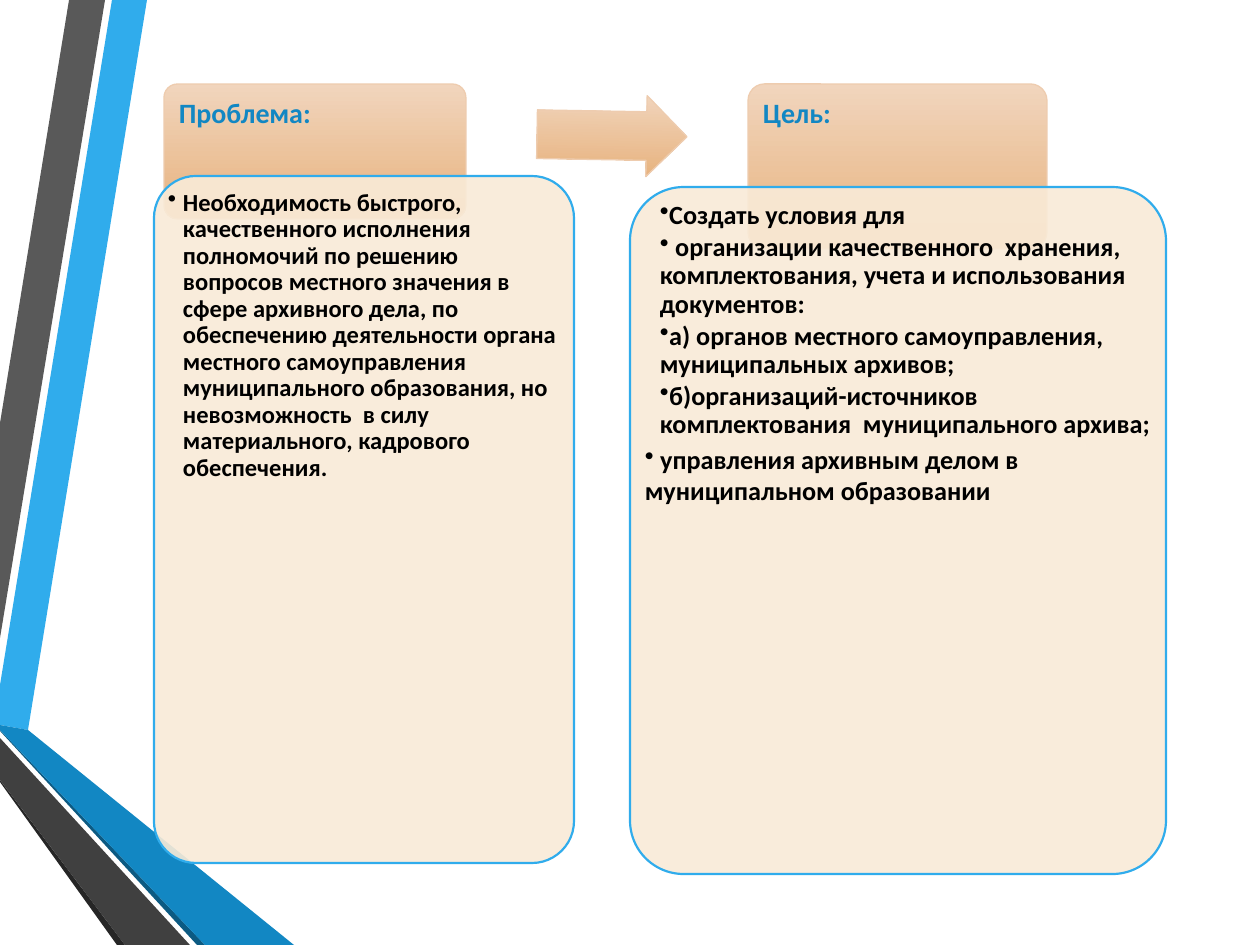
from lxml.etree import SubElement
from pptx import Presentation
from pptx.dml.color import RGBColor
from pptx.enum.shapes import MSO_SHAPE as Shape
from pptx.oxml.ns import qn
from pptx.util import Emu, Pt

PX = 914400 / 126
SLIDE_W, SLIDE_H = 1260, 945

SKY = RGBColor(0x30, 0xAC, 0xEC)
BLUE = RGBColor(0x12, 0x87, 0xC3)
DEEP_BLUE = RGBColor(0x0C, 0x5A, 0x82)
GREY = RGBColor(0x59, 0x59, 0x59)
DARK_GREY = RGBColor(0x40, 0x40, 0x40)
CHARCOAL = RGBColor(0x26, 0x26, 0x26)
PEACH = RGBColor(0xF1, 0xD5, 0xBD)
ORANGE = RGBColor(0xE7, 0xB2, 0x7D)
PEACH_EDGE = RGBColor(0xEE, 0xCC, 0xAF)
CREAM = RGBColor(0xF9, 0xEB, 0xD8)
BLACK = RGBColor(0, 0, 0)

# Ribbons at the left edge, from back to front
RIBBONS = [
    (SKY, [(0, 685), (0, 725), (28, 730), (147, 0), (112, 0)]),
    (GREY, [(105, 0), (69, 0), (0, 423), (0, 638)]),
    (CHARCOAL, [(0, 780), (0, 782), (117, 945), (125, 945)]),
    (DEEP_BLUE, [(0, 730), (0, 731), (197, 945), (205, 945)]),
    (BLUE, [(0, 730), (205, 945), (294, 945), (28, 730), (0, 725)]),
    (DARK_GREY, [(0, 780), (125, 945), (190, 945), (0, 738)]),
]

PROBLEM = [
    "Необходимость быстрого, качественного исполнения полномочий по решению "
    "вопросов местного значения в сфере архивного дела, по обеспечению "
    "деятельности органа местного самоуправления муниципального образования, "
    "но невозможность  в силу материального, кадрового обеспечения.",
]
GOALS = [
    "Создать условия для",
    " организации качественного  хранения, комплектования, учета и "
    "использования документов:",
    "а) органов местного самоуправления, муниципальных архивов;",
    "б)организаций-источников комплектования  муниципального архива;",
]
LAST_GOAL = " управления архивным делом в муниципальном образовании"


def px(length):
    return Emu(round(length * PX))


def add_ribbon(slide, color, points):
    builder = slide.shapes.build_freeform(*points[0], scale=PX)
    builder.add_line_segments(points[1:], close=True)
    ribbon = builder.convert_to_shape()
    ribbon.shadow.inherit = False
    ribbon.fill.solid()
    ribbon.fill.fore_color.rgb = color
    ribbon.line.fill.background()


def add_outlined(slide, kind, box, adjustments, edge, width):
    shape = slide.shapes.add_shape(kind, *map(px, box))
    shape.shadow.inherit = False
    for index, value in enumerate(adjustments):
        shape.adjustments[index] = value
    shape.line.color.rgb = edge
    shape.line.width = Pt(width)
    return shape


def add_gradient_shape(slide, kind, box, adjustments):
    shape = add_outlined(slide, kind, box, adjustments, PEACH_EDGE, 0.75)
    shape.fill.gradient()
    shape.fill.gradient_angle = 270
    for stop, color in zip(shape.fill.gradient_stops, (PEACH, ORANGE)):
        stop.color.rgb = color
    return shape


def add_panel(slide, box):
    panel = add_outlined(slide, Shape.ROUNDED_RECTANGLE, box, [0.1], SKY, 1.25)
    panel.fill.solid()
    panel.fill.fore_color.rgb = CREAM
    # 90 % opacity lets the header show through
    color = panel.fill._xPr.find(qn("a:solidFill"))[0]
    SubElement(color, qn("a:alpha"), val="90000")


def add_text_frame(slide, box, inset, bottom=None):
    frame = slide.shapes.add_textbox(*map(px, box)).text_frame
    frame.word_wrap = True
    frame.margin_left = frame.margin_top = frame.margin_right = px(inset)
    frame.margin_bottom = px(inset if bottom is None else bottom)
    return frame


def write(frame, text, size, color=BLACK, bullet=False, left=0, hanging=0,
          spacing=0.9, after=2):
    first = frame.paragraphs[0]
    paragraph = frame.add_paragraph() if first.runs else first
    paragraph.line_spacing = spacing
    paragraph.space_after = Pt(after)
    run = paragraph.add_run()
    run.text = text
    run.font.name = "Calibri"
    run.font.size = Pt(size)
    run.font.bold = True
    run.font.color.rgb = color
    if bullet:
        properties = paragraph._p.get_or_add_pPr()
        properties.set("marL", str(px(left)))
        properties.set("indent", str(px(-hanging)))
        SubElement(properties, qn("a:buChar"), char="•")


def add_header(slide, title, box, text_height):
    add_gradient_shape(slide, Shape.ROUNDED_RECTANGLE, box, [0.1])
    frame = add_text_frame(slide, (*box[:3], text_height), 15, bottom=9)
    write(frame, title, 16, color=BLUE, after=6)


def main():
    prs = Presentation()
    prs.slide_width, prs.slide_height = px(SLIDE_W), px(SLIDE_H)
    slide = prs.slides.add_slide(prs.slide_layouts[6])

    for color, points in RIBBONS:
        add_ribbon(slide, color, points)

    # Problem
    problem_box = (154, 176, 420, 687)
    add_header(slide, "Проблема:", (164, 84, 302, 135), 89)
    add_panel(slide, problem_box)
    problem = add_text_frame(slide, problem_box, 14)
    for text in PROBLEM:
        write(problem, text, 14, bullet=True, left=15, hanging=15)

    # Arrow from problem to goal
    arrow = add_gradient_shape(slide, Shape.RIGHT_ARROW, (537, 95, 150, 81),
                               [0.6, 0.5])
    arrow.rotation = 1

    # Goal
    goal_box = (630, 187, 536, 687)
    add_header(slide, "Цель:", (748, 84, 299, 165), 110)
    add_panel(slide, goal_box)
    goal = add_text_frame(slide, goal_box, 15)
    for text in GOALS:
        write(goal, text, 15, bullet=True, left=15)
    write(goal, LAST_GOAL, 15, bullet=True, spacing=1, after=0)

    prs.save("out.pptx")


if __name__ == "__main__":
    main()
